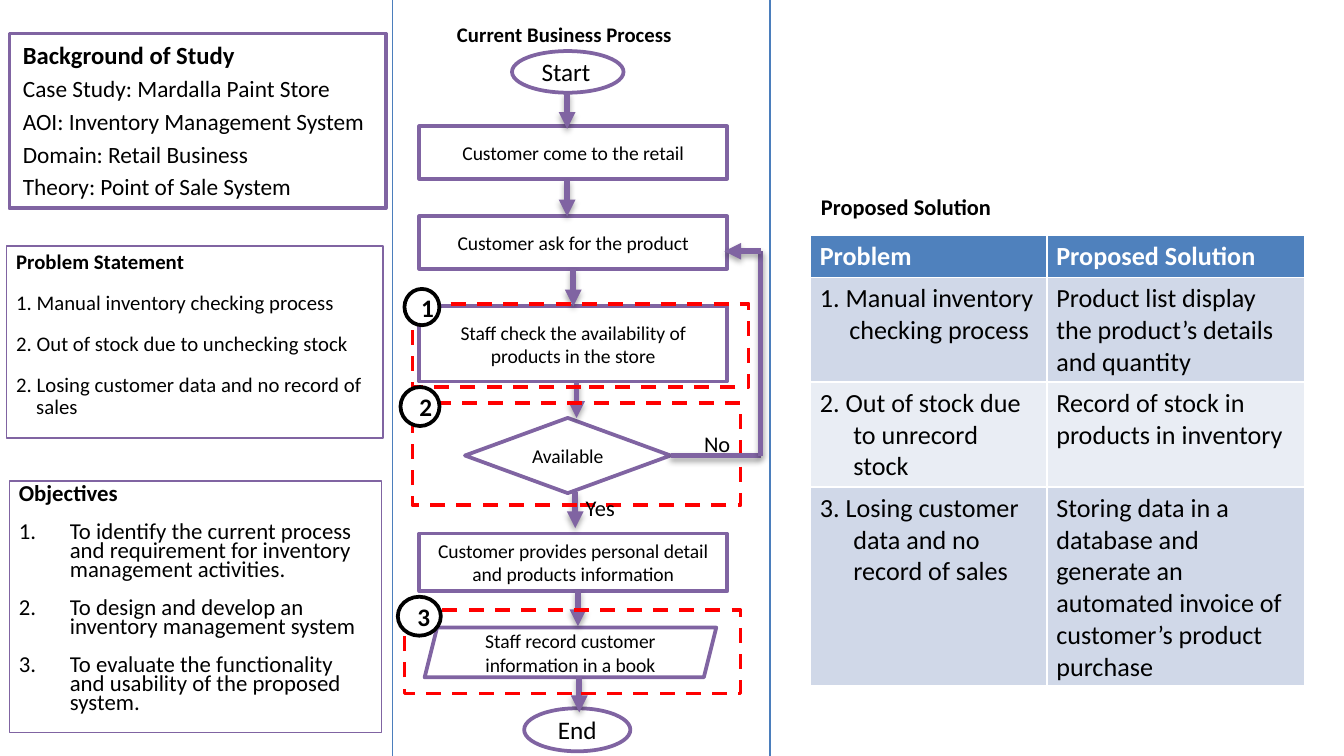
from pptx import Presentation
from pptx.dml.color import RGBColor
from pptx.enum.dml import MSO_LINE
from pptx.enum.shapes import MSO_CONNECTOR, MSO_SHAPE
from pptx.enum.text import MSO_ANCHOR, MSO_AUTO_SIZE, PP_ALIGN
from pptx.oxml import parse_xml
from pptx.oxml.ns import nsdecls
from pptx.util import Inches, Pt

RECT, OVAL = MSO_SHAPE.RECTANGLE, MSO_SHAPE.OVAL
DIAMOND, SLANT = MSO_SHAPE.DIAMOND, MSO_SHAPE.PARALLELOGRAM
STRAIGHT, DASH = MSO_CONNECTOR.STRAIGHT, MSO_LINE.DASH
TOP, MIDDLE = MSO_ANCHOR.TOP, MSO_ANCHOR.MIDDLE
LEFT, CENTER = PP_ALIGN.LEFT, PP_ALIGN.CENTER
NO_FIT = MSO_AUTO_SIZE.NONE

WIDTH = 10
HEIGHT = WIDTH * 9 / 16
THEME = {
    "font": "Calibri",
    "ink": "000000", "paper": "FFFFFF", "flow": "8064A2", "alert": "FF0000",
    "rule": "4B7EBC", "head": "4F81BD", "bands": ("D0D8E8", "E9EDF4"),
    "case_head": 13.2, "case": 12.5, "problem": 11.1, "goal": 12.2,
    "step": 10.5, "mark": 13.5, "label": 12, "cell": 14,
}
TIGHT = (0.07, 0.04)
WIDE = (0.1, 0.05)

TITLE = "Current Business Process"
CASE = ["Background of Study", "Case Study: Mardalla Paint Store",
        "AOI: Inventory Management System", "Domain: Retail Business",
        "Theory: Point of Sale System"]
PROBLEMS = ["Problem Statement", "1. Manual inventory checking process",
            "2. Out of stock due to unchecking stock",
            "2. Losing customer data and no record of sales"]
GOALS = ["Objectives",
         "To identify the current process and requirement for inventory management activities.",
         "To design and develop an inventory management system",
         "To evaluate the functionality and usability of the proposed system."]

# name: (shape, text, box, size, align)
STEPS = {
    "start": (OVAL, "Start", (3.81, 0.38, 0.83, 0.31), "mark", LEFT),
    "come": (RECT, "Customer come to the retail", (3.12, 0.94, 2.29, 0.39), "step", CENTER),
    "ask": (RECT, "Customer ask for the product", (3.12, 1.61, 2.29, 0.39), "step", CENTER),
    "check": (RECT, "Staff check the availability of products in the store",
              (3.12, 2.28, 2.29, 0.56), "step", CENTER),
    "choice": (DIAMOND, "Available", (3.46, 3.11, 1.53, 0.56), "step", CENTER),
    "detail": (RECT, "Customer provides personal detail and products information",
               (3.12, 3.97, 2.29, 0.43), "step", CENTER),
    "record": (SLANT, "Staff record customer information in a book",
               (3.16, 4.67, 2.17, 0.37), "step", CENTER),
    "end": (OVAL, "End", (3.9, 5.27, 0.79, 0.32), "mark", CENTER),
}
# x, top of each downward arrow
DROPS = [(4.22, 0.69), (4.22, 1.34), (4.29, 2.84), (4.28, 3.66), (4.3, 4.39), (4.31, 5.03)]
DROP = 0.27
LOOP = [(4.99, 3.39), (5.66, 3.39), (5.66, 1.87), (5.39, 1.87)]
# dashed frame, numbered badge
ISSUES = [
    ((3.07, 2.26, 2.5, 0.62), (3.01, 2.15, 0.26, 0.27)),
    ((3.07, 3, 2.44, 0.76), (2.98, 2.88, 0.29, 0.29)),
    ((3.01, 4.54, 2.5, 0.62), (2.96, 4.44, 0.32, 0.29)),
]
LABELS = [("No", (5.14, 3.15, 0.4, 0.3), False, True),
          ("Yes", (4.26, 3.63, 0.44, 0.3), False, True),
          ("Proposed Solution", (6.01, 1.39, 1.49, 0.3), True, False)]
RULES = [2.92, 5.73]

# each cell: list of (text, left margin, first-line indent)
HANG = (0.25, -0.25)
TABLE = [
    [[("Problem", 0, 0)], [("Proposed Solution", 0, 0)]],
    [[("1. Manual inventory", 0, 0), ("checking process", 0.22, 0)],
     [("Product list display the product’s details and quantity", 0, 0)]],
    [[("2. Out of stock due to unrecord stock", *HANG)],
     [("Record of stock in products in inventory", 0, 0)]],
    [[("3. Losing customer data and no record of sales", *HANG)],
     [("Storing data in a database and generate an automated invoice of "
       "customer’s product purchase", 0, 0)]],
]
COLS, ROWS = [1.76, 1.92], [0.3, 0.75, 0.53, 1.2]


def color(key):
    return RGBColor.from_string(THEME[key] if key in THEME else key)


def inches(box):
    return [Inches(n) for n in box]


def put(obj, **values):
    for name, value in values.items():
        setattr(obj, name, value)


def pad(obj, gap):
    x, y = inches(gap)
    put(obj, margin_left=x, margin_right=x, margin_top=y, margin_bottom=y)


def write(para, text, size, bold=False, ink="ink", indent=(0, 0), bullet="buNone", **form):
    props = para._p.get_or_add_pPr()
    for name, value in zip(("marL", "indent"), indent):
        props.set(name, str(Inches(value)))
    kind = ' type="arabicPeriod"' if bullet == "buAutoNum" else ""
    props.append(parse_xml(f"<a:{bullet} {nsdecls('a')}{kind}/>"))
    put(para, **form)
    run = para.add_run()
    run.text = text
    put(run.font, name=THEME["font"], size=Pt(THEME[size]), bold=bold)
    run.font.color.rgb = color(ink)


def lines(frame):
    """Yield the first paragraph of a frame, then new ones."""
    yield frame.paragraphs[0]
    while True:
        yield frame.add_paragraph()


def style(shape, line, width, fill="paper"):
    if fill:
        shape.fill.solid()
        shape.fill.fore_color.rgb = color(fill)
    else:
        shape.fill.background()
    shape.line.color.rgb = color(line)
    shape.line.width = Pt(width)


def draw(slide, kind, box, line="flow", width=2, fill="paper"):
    shape = slide.shapes.add_shape(kind, *inches(box))
    shape.shadow.inherit = False
    style(shape, line, width, fill)
    return shape


def fill_panel(shape, texts, size, head=None, gap=10, space=0.9, indents=(), bullet="buNone"):
    frame = shape.text_frame
    put(frame, word_wrap=True, auto_size=NO_FIT, vertical_anchor=TOP)
    for i, (text, para) in enumerate(zip(texts, lines(frame))):
        write(para, text, size if i else head or size, bold=i == 0,
              indent=indents[i] if indents else (0, 0),
              bullet=bullet if i else "buNone", alignment=LEFT,
              line_spacing=space, space_before=Pt(gap if i else 0))


def link(slide, start, end, ink="flow", width=3, head=True, shade=True):
    line = slide.shapes.add_connector(STRAIGHT, *inches(start + end))
    line.line.color.rgb = color(ink)
    line.line.width = Pt(width)
    if head:
        line.line._get_or_add_ln().append(
            parse_xml(f'<a:tailEnd {nsdecls("a")} type="triangle"/>'))
    shadow = ('<a:outerShdw blurRad="40000" dist="23000" dir="5400000" rotWithShape="0">'
              '<a:srgbClr val="000000"><a:alpha val="35000"/></a:srgbClr></a:outerShdw>')
    line._element.spPr.append(parse_xml(
        f'<a:effectLst {nsdecls("a")}>{shadow if shade else ""}</a:effectLst>'))
    return line


def add_panels(slide):
    title, body = slide.shapes.title, slide.placeholders[1]
    for holder, box in ((title, (3.33, 0.14, 1.86, 0.32)), (body, (0.07, 0.25, 2.8, 1.3))):
        put(holder, **dict(zip(("left", "top", "width", "height"), inches(box))))
    pad(title.text_frame, TIGHT)
    fill_panel(title, [TITLE], "problem")
    style(body, "flow", 2)
    fill_panel(body, CASE, "case", "case_head", gap=2.5, space=1.0)

    hang = (0.15, -0.15)
    problem = draw(slide, RECT, (0.05, 1.83, 2.8, 1.43), width=0.75)
    goal = draw(slide, RECT, (0.07, 3.58, 2.77, 1.87), width=0.75)
    for panel in (problem, goal):
        pad(panel.text_frame, TIGHT)
    fill_panel(problem, PROBLEMS, "problem", indents=[(0, 0)] * 2 + [hang] * 2)
    fill_panel(goal, GOALS, "goal", space=0.7,
               indents=[(0, 0)] + [(0.38, -0.38)] * 3, bullet="buAutoNum")


def add_flow(slide):
    nodes = {}
    for name, (kind, text, box, size, align) in STEPS.items():
        node = nodes[name] = draw(slide, kind, box)
        node.text_frame.vertical_anchor = MIDDLE
        write(node.text_frame.paragraphs[0], text, size, alignment=align)
    for x, y in DROPS:
        link(slide, (x, y), (x, y + DROP))
    drop = link(slide, (4.26, 2), (4.26, 2.28))
    drop.begin_connect(nodes["ask"], 2)
    drop.end_connect(nodes["check"], 0)

    for frame, _ in ISSUES:
        draw(slide, RECT, frame, "alert", fill=None).line.dash_style = DASH
    loop = [link(slide, a, b, head=b == LOOP[-1]) for a, b in zip(LOOP, LOOP[1:])]
    loop[0].begin_connect(nodes["choice"], 3)
    for i, (_, box) in enumerate(ISSUES, 1):
        badge = draw(slide, OVAL, box, "ink")
        badge.text_frame.vertical_anchor = MIDDLE
        write(badge.text_frame.paragraphs[0], str(i), "mark", bold=True, alignment=CENTER)


def add_labels(slide):
    for text, box, bold, wrap in LABELS:
        frame = slide.shapes.add_textbox(*inches(box)).text_frame
        frame.word_wrap = wrap
        pad(frame, WIDE)
        write(frame.paragraphs[0], text, "label", bold=bold)


def add_grid(slide):
    box = (6.03, 1.75, sum(COLS), sum(ROWS))
    grid = slide.shapes.add_table(len(ROWS), len(COLS), *inches(box)).table
    for col, width in zip(grid.columns, COLS):
        col.width = Inches(width)
    for r, (height, cells) in enumerate(zip(ROWS, TABLE)):
        grid.rows[r].height = Inches(height)
        for c, texts in enumerate(cells):
            cell = grid.cell(r, c)
            pad(cell, TIGHT)
            cell.fill.solid()
            cell.fill.fore_color.rgb = color(THEME["bands"][(r - 1) % 2] if r else "head")
            for (text, left, first), para in zip(texts, lines(cell.text_frame)):
                write(para, text, "cell", bold=r == 0, ink="ink" if r else "paper",
                      indent=(left, first))


def main():
    deck = Presentation()
    deck.slide_width, deck.slide_height = inches((WIDTH, HEIGHT))
    slide = deck.slides.add_slide(deck.slide_layouts[1])
    add_panels(slide)
    add_flow(slide)
    add_labels(slide)
    for x in RULES:
        link(slide, (x, 0), (x, HEIGHT), "rule", 0.75, head=False, shade=False)
    add_grid(slide)
    deck.save("out.pptx")


if __name__ == "__main__":
    main()
